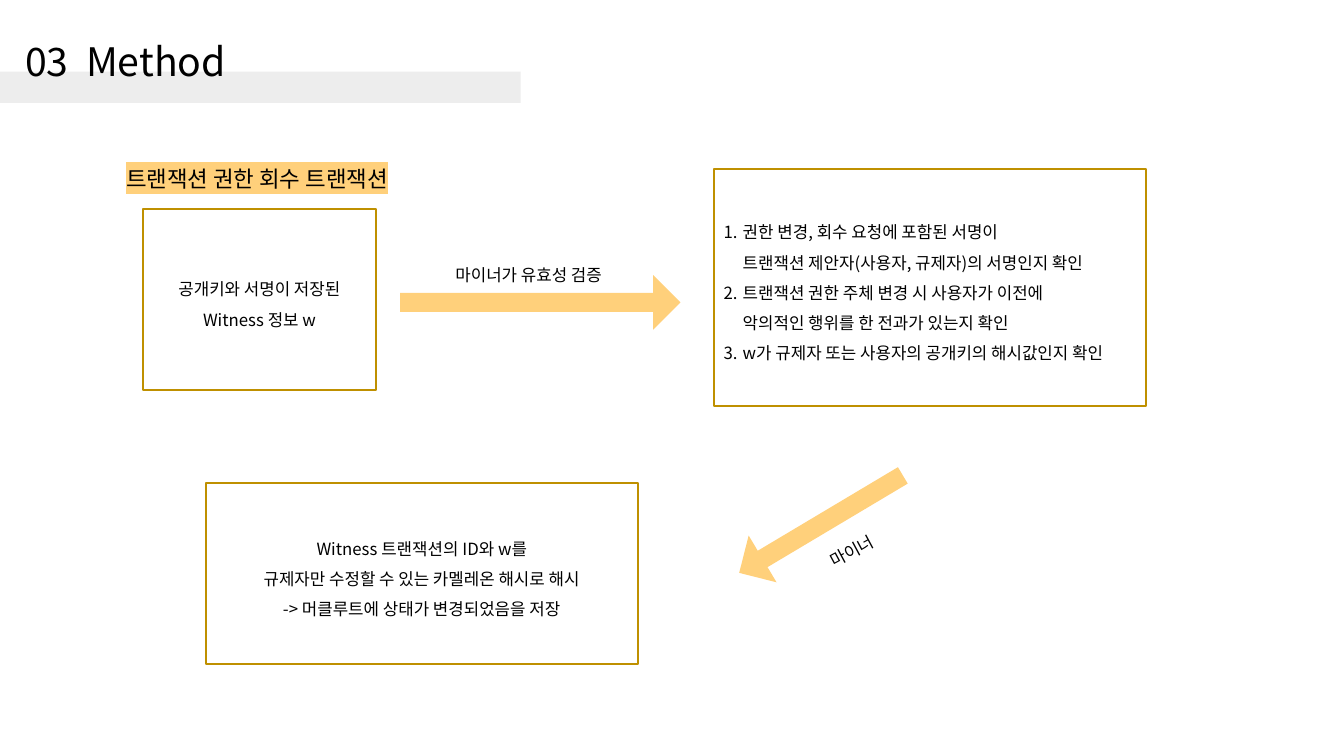
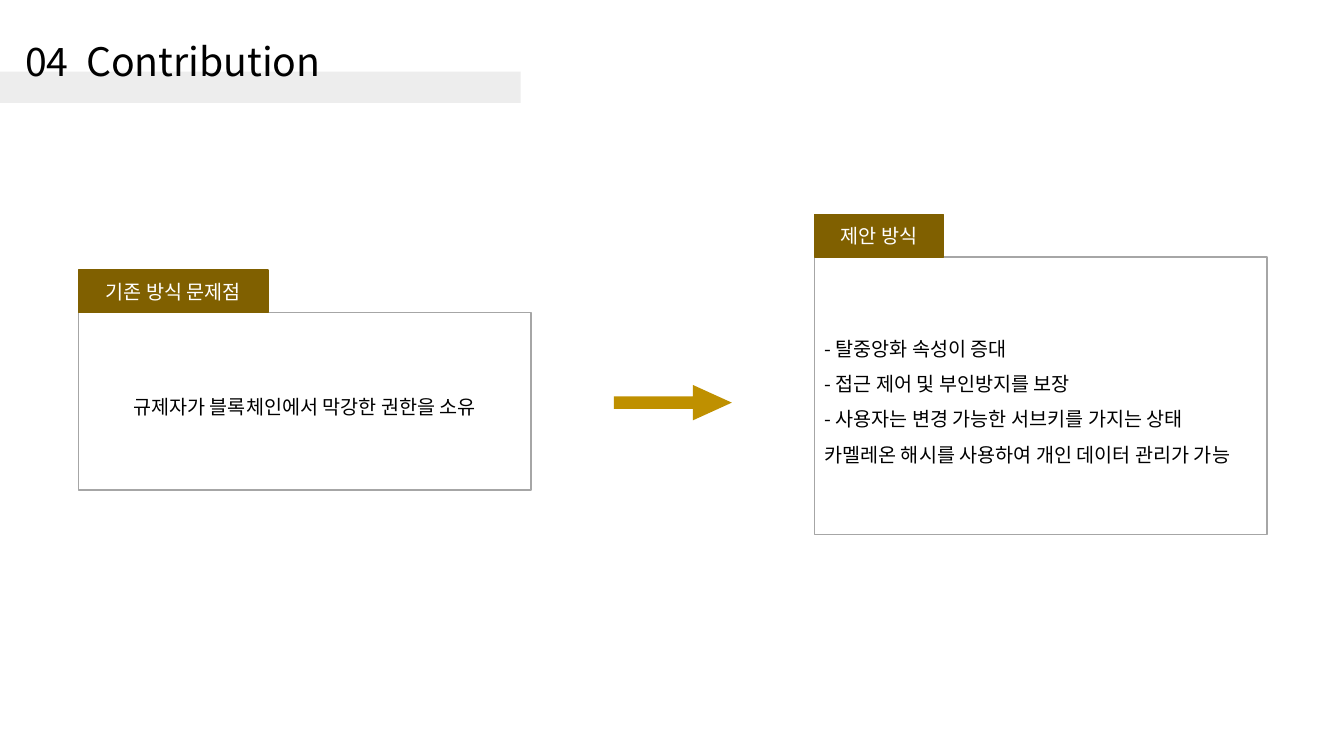
from dataclasses import dataclass

from lxml.etree import SubElement
from pptx import Presentation
from pptx.dml.color import RGBColor
from pptx.enum.shapes import MSO_SHAPE as SHAPE
from pptx.enum.text import MSO_ANCHOR as ANCHOR, PP_ALIGN as ALIGN
from pptx.oxml.ns import qn
from pptx.util import Inches, Pt

FONT = "Noto Sans CJK KR"
COLORS = {
    "text": "000000", "white": "FFFFFF", "band": "EDEDED", "sand": "FFD07B",
    "gold": "BF9000", "olive": "806000", "grey": "A6A6A6",
}
WIDTH, HEIGHT = Inches(13.33), Inches(7.5)
TITLE_ONLY = 5


@dataclass
class Box:
    """Hold a rectangle in percent of the slide's width and height."""
    x: float
    y: float
    w: float
    h: float

    def emu(self):
        """Return left, top, width and height as lengths."""
        return (round(WIDTH * self.x / 100), round(HEIGHT * self.y / 100),
                round(WIDTH * self.w / 100), round(HEIGHT * self.h / 100))

    def inside(self, x, y, w, h):
        """Return a box offset from this box's corner."""
        return Box(self.x + x, self.y + y, w, h)


PAGE = Box(0, 0, 100, 100)


def rgb(name):
    """Look up a palette colour."""
    return RGBColor.from_string(COLORS[name])


def style_run(r, size, color="text", highlight=None):
    """Set the font of a run for Latin and Korean text."""
    r.font.size = Pt(size)
    r.font.color.rgb = rgb(color)
    rPr = r.font._element
    if highlight:
        mark = SubElement(rPr, qn("a:highlight"))
        SubElement(mark, qn("a:srgbClr")).set("val", COLORS[highlight])
    r.font.name = FONT
    SubElement(rPr, qn("a:ea")).set("typeface", FONT)


def number(p, indent=0.19):
    """Number a paragraph automatically with a hanging indent."""
    pPr = p._p.get_or_add_pPr()
    pPr.set("marL", str(Inches(indent)))
    pPr.set("indent", str(-Inches(indent)))
    SubElement(pPr, qn("a:buAutoNum")).set("type", "arabicPeriod")


def write(tf, paragraphs, size, color="text", align=ALIGN.CENTER, spacing=1.5,
          anchor=ANCHOR.MIDDLE, wrap=True, highlight=None, numbered=False):
    """Fill a text frame, one paragraph per item and one run per line."""
    tf.word_wrap = wrap
    tf.vertical_anchor = anchor
    for i, lines in enumerate(paragraphs):
        p = tf.add_paragraph() if i else tf.paragraphs[0]
        p.alignment = align
        p.line_spacing = spacing
        if numbered:
            number(p)
        for j, line in enumerate(lines.split("\n")):
            if j:
                p.add_line_break()
            r = p.add_run()
            r.text = line
            style_run(r, size, color, highlight)


def add_block(slide, box, fill=None, line=None, line_width=1, kind=SHAPE.RECTANGLE):
    """Add a flat preset shape."""
    sp = slide.shapes.add_shape(kind, *box.emu())
    sp.shadow.inherit = False
    if fill:
        sp.fill.solid()
        sp.fill.fore_color.rgb = rgb(fill)
    else:
        sp.fill.background()
    if line:
        sp.line.color.rgb = rgb(line)
        sp.line.width = Pt(line_width)
    else:
        sp.line.fill.background()
    return sp


def add_arrow(slide, box, fill, shaft, head, rotation=0):
    """Add a block arrow pointing right before rotation."""
    sp = add_block(slide, box, fill, kind=SHAPE.RIGHT_ARROW)
    sp.adjustments[0], sp.adjustments[1] = shaft, head
    sp.rotation = rotation


def add_label(slide, box, text, size=12, rotation=0, **style):
    """Add a free-standing line of text."""
    sp = slide.shapes.add_textbox(*box.emu())
    sp.rotation = rotation
    write(sp.text_frame, [text], size, **style)


def add_step(slide, box, paragraphs, **style):
    """Add a gold-framed step of the flow."""
    sp = add_block(slide, box, "white", "gold", 1.5)
    write(sp.text_frame, paragraphs, 12, **style)


def add_panel(slide, box, tab_width, heading, paragraphs, align):
    """Add a grey-framed panel under a heading tab."""
    tab_height = 5.6
    body = add_block(slide, box.inside(0, tab_height, box.w, box.h - tab_height),
                     line="grey")
    write(body.text_frame, paragraphs, 14, align=align)
    tab = add_block(slide, box.inside(0, 0, tab_width, tab_height), "olive", "olive")
    write(tab.text_frame, [heading], 14, "white", spacing=1)


def add_titled_slide(prs, title):
    """Add a slide with the title over its grey band."""
    slide = prs.slides.add_slide(prs.slide_layouts[TITLE_ONLY])
    band = add_block(slide, PAGE.inside(0, 9.47, 38.75, 4.13), "band")
    sp = slide.shapes.title
    sp._element.addprevious(band._element)
    sp.left, sp.top, sp.width, sp.height = PAGE.inside(1.12, 2, 36.3, 12.93).emu()
    write(sp.text_frame, [title], 28, align=ALIGN.LEFT, spacing=0.9)
    return slide


def build_method(prs, box=PAGE):
    """Build the flow of the revocation transaction."""
    slide = add_titled_slide(prs, "03  Method")
    add_label(slide, box.inside(7.42, 19.73, 23.4, 6.13),
              "트랜잭션 권한 회수 트랜잭션", 16, highlight="sand")
    add_step(slide, box.inside(10.65, 27.6, 17.32, 24),
             ["공개키와 서명이 저장된 Witness 정보 w"])
    add_step(slide, box.inside(53.1, 22.4, 32.17, 31.33), [
        "권한 변경, 회수 요청에 포함된 서명이\n"
        "트랜잭션 제안자(사용자, 규제자)의 서명인지 확인",
        "트랜잭션 권한 주체 변경 시 사용자가 이전에\n"
        "악의적인 행위를 한 전과가 있는지 확인",
        "w가 규제자 또는 사용자의 공개키의 해시값인지 확인",
    ], align=ALIGN.LEFT, numbered=True)
    add_step(slide, box.inside(15.3, 63.87, 32.17, 24), [
        "Witness 트랜잭션의 ID와 w를",
        "규제자만 수정할 수 있는 카멜레온 해시로 해시",
        "-> 머클루트에 상태가 변경되었음을 저장",
    ])
    plain = dict(align=ALIGN.LEFT, spacing=1, anchor=ANCHOR.TOP, wrap=False)
    add_arrow(slide, box.inside(29.78, 36.4, 20.85, 7.2), "sand", 0.35, 0.5)
    add_label(slide, box.inside(33.15, 34.4, 12.9, 4), "마이너가 유효성 검증", **plain)
    add_arrow(slide, box.inside(54, 65.73, 14.17, 7.2), "sand", 0.35, 0.5, 149.2)
    add_label(slide, box.inside(60.9, 70.8, 5.1, 4), "마이너", rotation=331.7, **plain)


def build_contribution(prs, box=PAGE):
    """Build the comparison of the existing and the proposed scheme."""
    slide = add_titled_slide(prs, "04  Contribution")
    add_panel(slide, box.inside(5.85, 35.73, 33.67, 29.07), 14.1, "기존 방식 문제점",
              ["규제자가 블록체인에서 막강한 권한을 소유"], ALIGN.CENTER)
    add_arrow(slide, box.inside(45.67, 50.93, 8.78, 4.67), "gold", 0.36, 1.1)
    add_panel(slide, box.inside(60.6, 28.4, 33.67, 42.27), 9.6, "제안 방식", [
        "- 탈중앙화 속성이 증대",
        "- 접근 제어 및 부인방지를 보장",
        "- 사용자는 변경 가능한 서브키를 가지는 상태 "
        "카멜레온 해시를 사용하여 개인 데이터 관리가 가능",
    ], ALIGN.LEFT)


def main():
    """Build and save the presentation."""
    prs = Presentation()
    prs.slide_width, prs.slide_height = WIDTH, HEIGHT
    build_method(prs)
    build_contribution(prs)
    prs.save("out.pptx")


if __name__ == "__main__":
    main()
